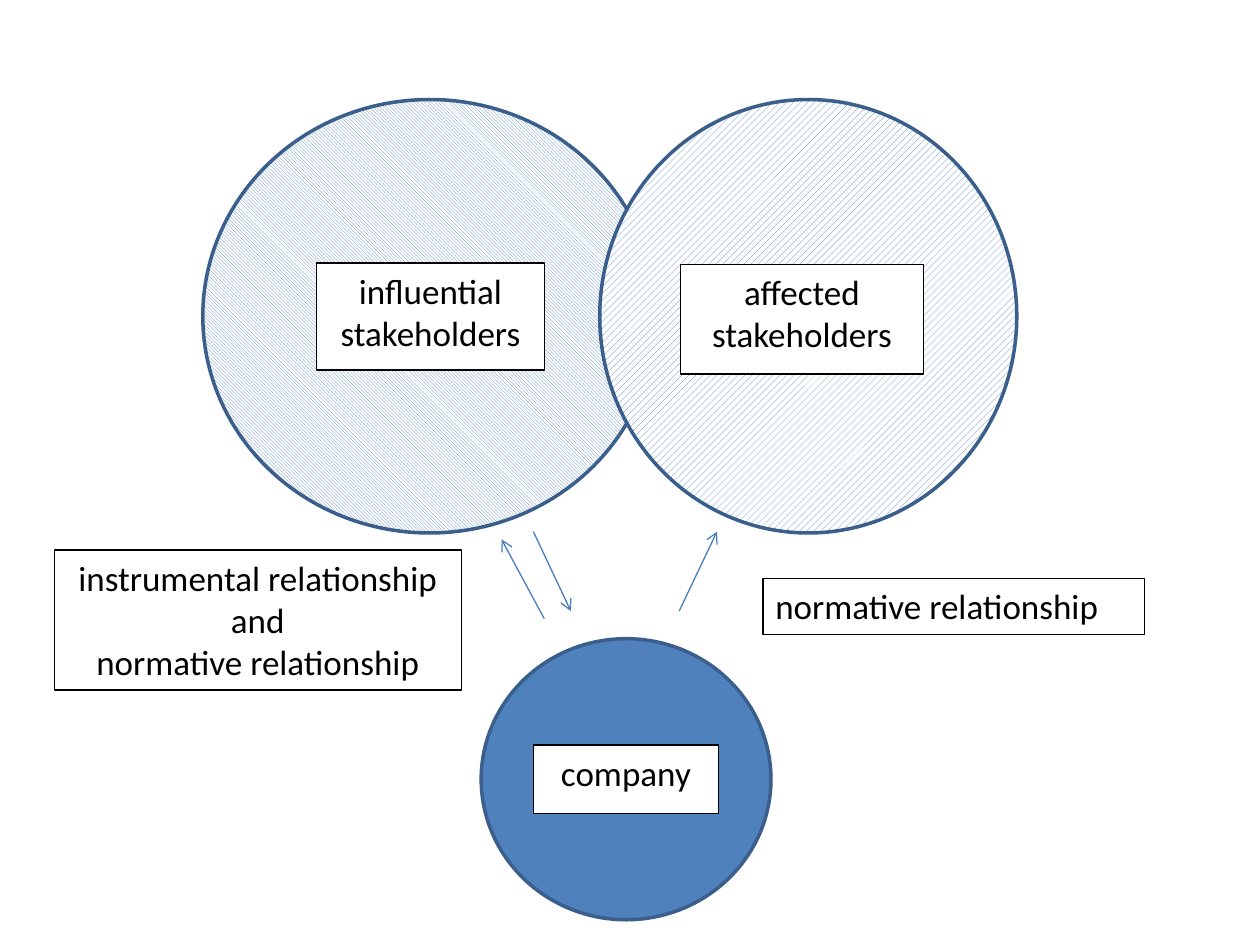
from lxml import etree
from pptx import Presentation
from pptx.dml.color import RGBColor
from pptx.enum import dml, shapes, text
from pptx.oxml import ns
from pptx.util import Pt

COLORS = {
    "blue": "4F81BD",
    "outline": "3A5F8C",
    "arrow": "4B7EBC",
    "white": "FFFFFF",
    "black": "000000",
}


def rgb(name):
    return RGBColor.from_string(COLORS[name])


prs = Presentation()
prs.slide_width, prs.slide_height = Pt(720), Pt(540)
s = prs.slides.add_slide(prs.slide_layouts[6])

circles = [
    (115.9, 56.9, 259.2, 247.7, dml.MSO_PATTERN.DARK_DOWNWARD_DIAGONAL),
    (342.7, 56.9, 238.3, 247.7, dml.MSO_PATTERN.WIDE_UPWARD_DIAGONAL),
    (275, 365, 165.6, 160.6, None),
]
for x, y, w, h, pattern in circles:
    sp = s.shapes.add_shape(shapes.MSO_SHAPE.OVAL, Pt(x), Pt(y), Pt(w), Pt(h))
    sp.shadow.inherit = False
    if pattern:
        sp.fill.patterned()
        sp.fill.pattern = pattern
        sp.fill.fore_color.rgb = rgb("blue")
        sp.fill.back_color.rgb = rgb("white")
    else:
        sp.fill.solid()
        sp.fill.fore_color.rgb = rgb("blue")
    sp.line.color.rgb = rgb("outline")
    sp.line.width = Pt(2)

CENTER, LEFT = text.PP_ALIGN.CENTER, text.PP_ALIGN.LEFT
labels = [
    (180.7, 150.2, 130.6, 61.2, CENTER, "white", ["influential stakeholders"]),
    (388.8, 151.2, 139, 62.6, CENTER, "white", ["affected stakeholders"]),
    (304.8, 425.7, 105.8, 39, CENTER, "white", ["company"]),
    (436, 330.5, 218.2, 32, LEFT, None, ["normative relationship"]),
    (31, 314.4, 232.6, 80, CENTER, "white",
     ["instrumental relationship", "and", "normative relationship"]),
]
for x, y, w, h, align, fill, lines in labels:
    sp = s.shapes.add_textbox(Pt(x), Pt(y), Pt(w), Pt(h))
    if fill:
        sp.fill.solid()
        sp.fill.fore_color.rgb = rgb(fill)
    sp.line.color.rgb = rgb("black")
    sp.line.width = Pt(0.75)
    tf = sp.text_frame
    tf.word_wrap = True
    tf.vertical_anchor = text.MSO_ANCHOR.TOP
    for i, line in enumerate(lines):
        p = tf.add_paragraph() if i else tf.paragraphs[0]
        p.alignment = align
        r = p.add_run()
        r.text = line
        r.font.name = "Calibri"
        r.font.size = Pt(20)
        r.font.color.rgb = rgb("black")

arrows = [
    (304.8, 303.8, 326.2, 349.2),
    (388.1, 349.2, 409.7, 303.8),
    (311, 353.5, 286.6, 308.2),
]
for x1, y1, x2, y2 in arrows:
    c = s.shapes.add_connector(shapes.MSO_CONNECTOR.STRAIGHT, Pt(x1), Pt(y1), Pt(x2), Pt(y2))
    c.line.color.rgb = rgb("arrow")
    c.line.width = Pt(0.75)
    etree.SubElement(c.line._get_or_add_ln(), ns.qn("a:tailEnd"), type="arrow")
    etree.SubElement(c._element.spPr, ns.qn("a:effectLst"))

prs.save("out.pptx")
